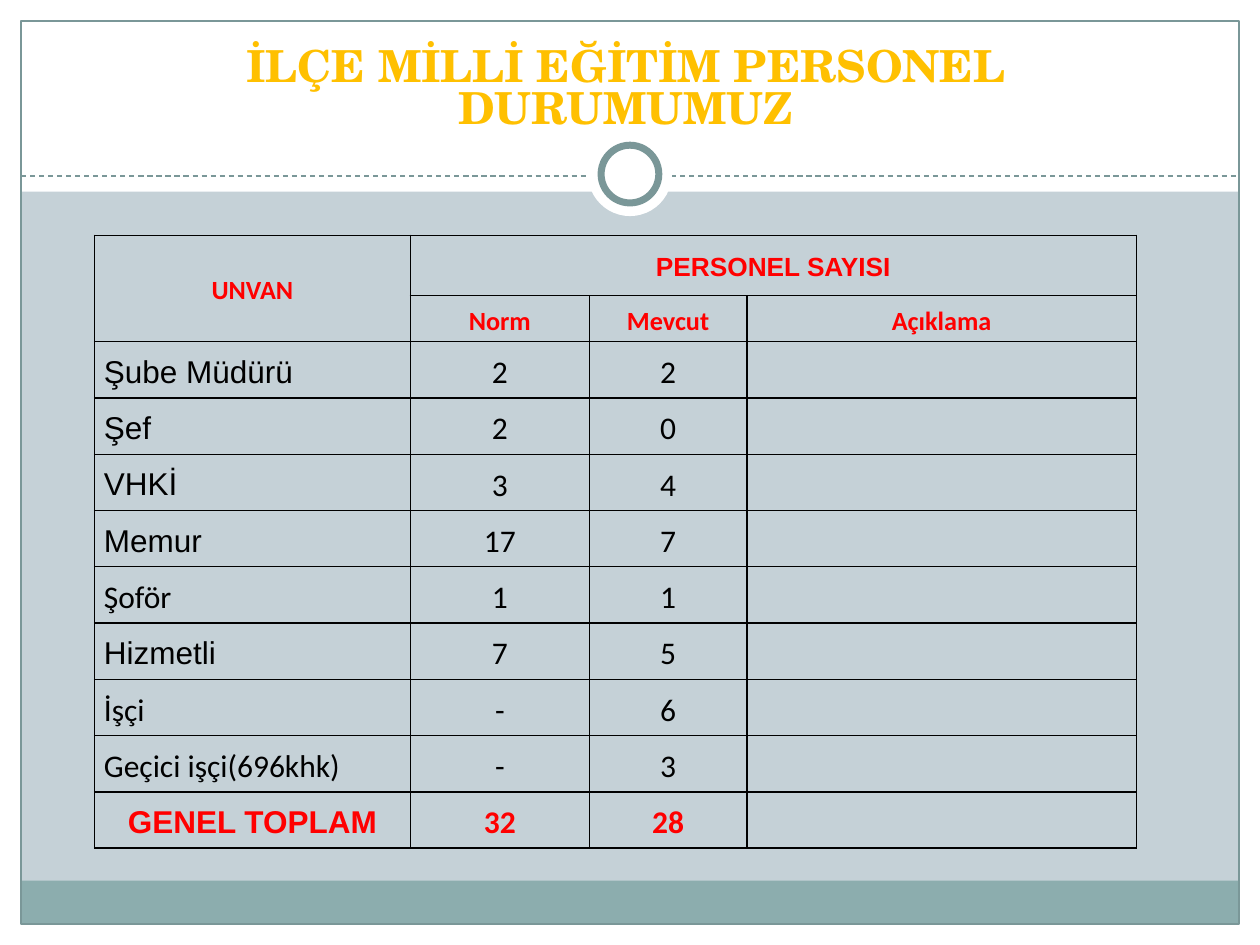
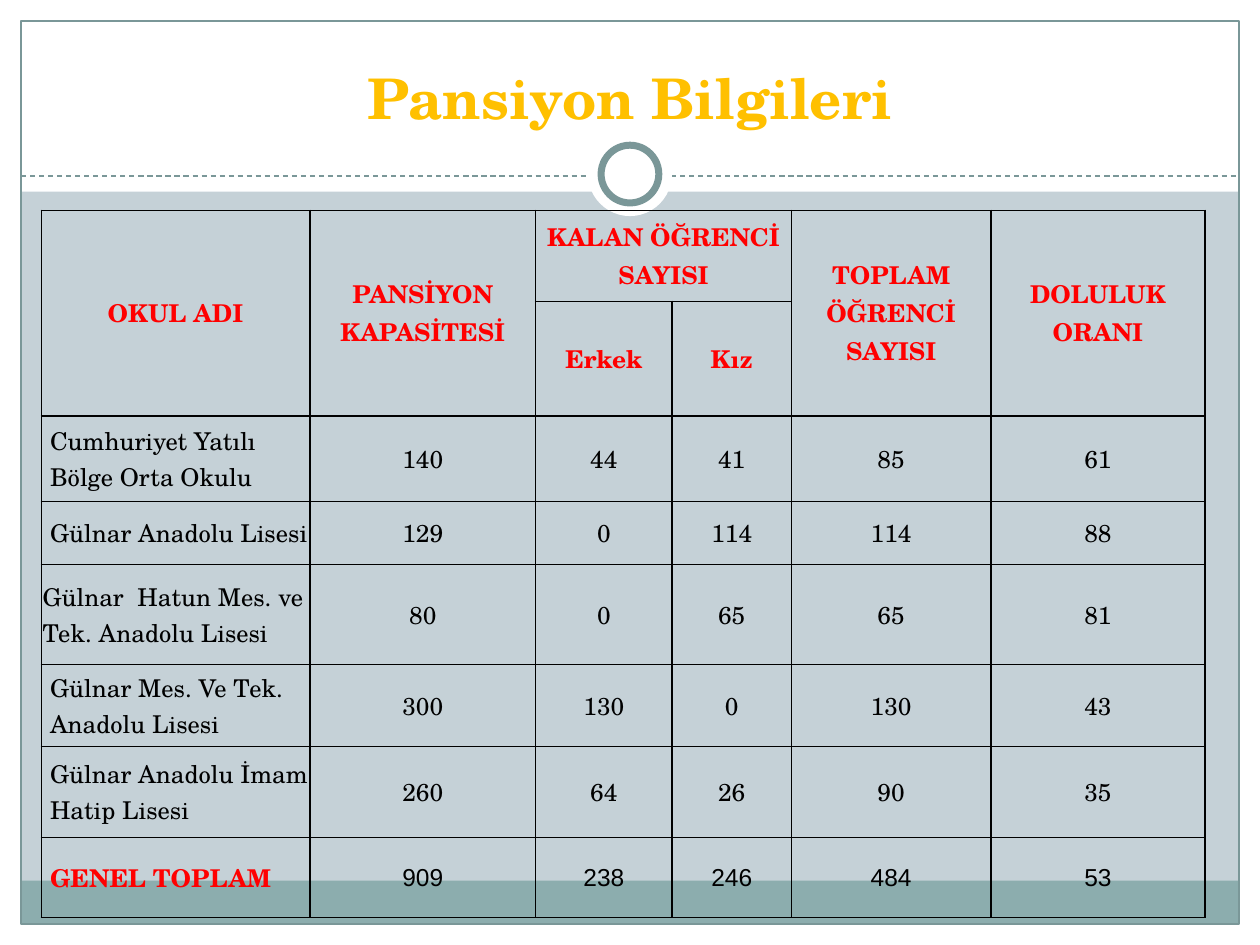
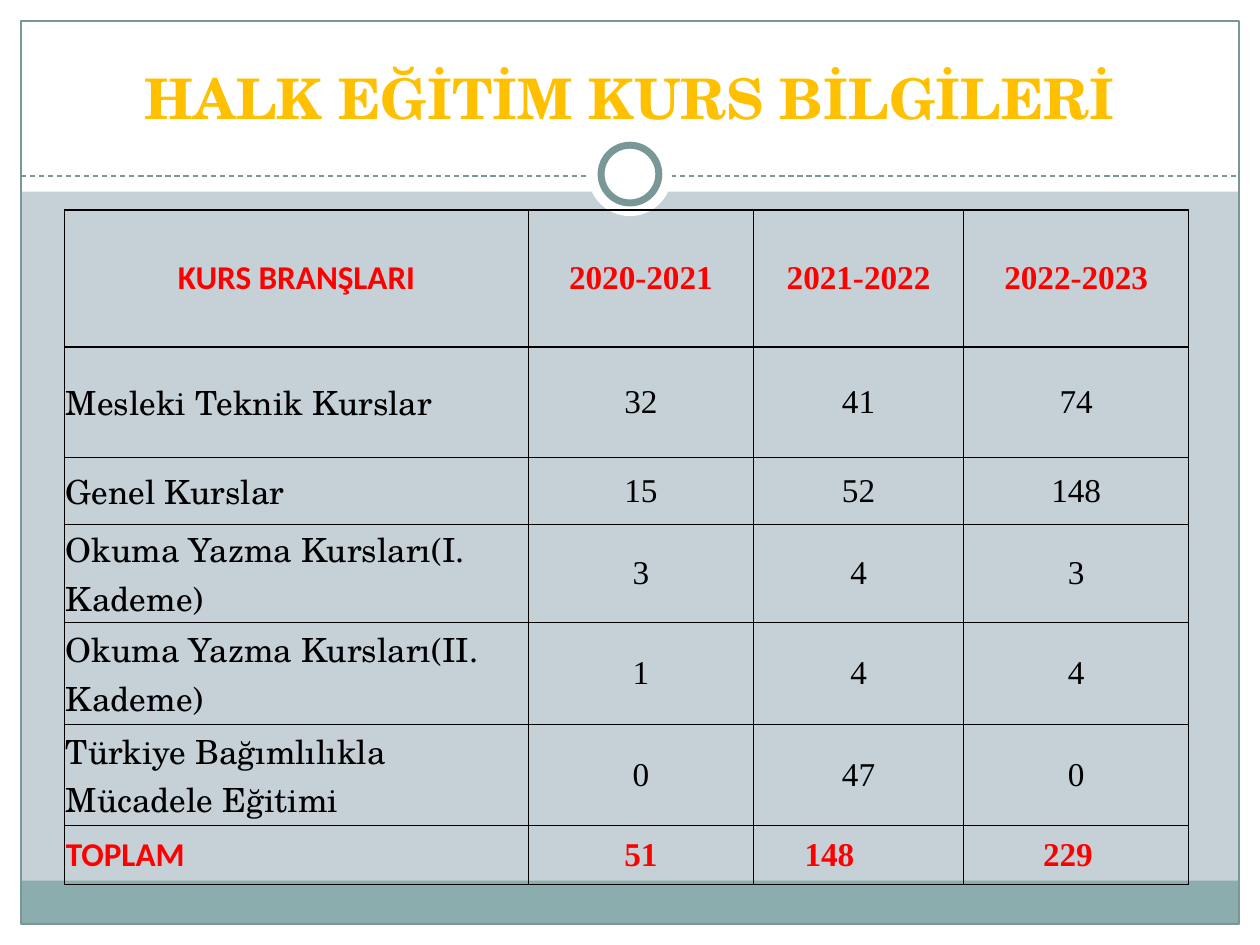
from dataclasses import dataclass

from lxml import etree
from pptx import Presentation
from pptx import util as u
from pptx.dml.color import RGBColor
from pptx.enum import dml, shapes, text
from pptx.oxml import ns


@dataclass(frozen=True)
class Theme:
    background: str = "C5D1D7"
    white: str = "FFFFFF"
    footer: str = "8CADAE"
    frame: str = "7A9798"
    title: str = "FFC000"
    accent: str = "FF0000"
    body: str = "000000"
    serif: str = "TeX Gyre Schola"
    sans: str = "Arial"
    humanist: str = "Calibri"
    roman: str = "Times New Roman"
    title_size: float = 32
    long_title_size: float = 25.2
    staff_header_size: float = 15
    staff_size: float = 18
    dormitory_size: float = 14
    course_size: float = 19


THEME = Theme()
WIDTH, HEIGHT, EDGE = 720, 540, 12
LEFT, CENTER = text.PP_ALIGN.LEFT, text.PP_ALIGN.CENTER
MIDDLE, BOTTOM = text.MSO_ANCHOR.MIDDLE, text.MSO_ANCHOR.BOTTOM


@dataclass(frozen=True)
class Style:
    font: str
    size: float
    color: str = THEME.body
    bold: bool = False


@dataclass(frozen=True)
class Cell:
    text: str
    style: Style
    align: int = CENTER
    left: float = 0.7
    right: float = 0.7


def accent(font, size):
    return Style(font, size, THEME.accent, True)


def row_of(texts, style):
    return [Cell(value, style) for value in texts]


def rgb(color):
    return RGBColor.from_string(color)


def write(paragraph, value, style, align, spacing):
    paragraph.text = value
    paragraph.alignment = align
    paragraph.line_spacing = spacing
    font = paragraph.font
    font.name, font.size, font.bold = style.font, u.Pt(style.size), style.bold
    font.color.rgb = rgb(style.color)


def add_shape(slide, kind, box, fill=None, line=None, weight=0.75):
    shape = slide.shapes.add_shape(kind, *map(u.Pt, box))
    shape.shadow.inherit = False
    if fill:
        shape.fill.solid()
        shape.fill.fore_color.rgb = rgb(fill)
    else:
        shape.fill.background()
    if line:
        shape.line.color.rgb = rgb(line)
        shape.line.width = u.Pt(weight)
    else:
        shape.line.fill.background()


def add_dashed_line(slide, left, right, top):
    connector = slide.shapes.add_connector(
        shapes.MSO_CONNECTOR.STRAIGHT, u.Pt(left), u.Pt(top), u.Pt(right), u.Pt(top))
    connector.line.color.rgb = rgb(THEME.frame)
    connector.line.width = u.Pt(0.75)
    connector.line.dash_style = dml.MSO_LINE.DASH
    etree.SubElement(connector._element.spPr, ns.qn("a:effectLst"))


def add_frame(slide):
    rectangle, oval = shapes.MSO_SHAPE.RECTANGLE, shapes.MSO_SHAPE.OVAL
    inner_width, inner_height = WIDTH - 2 * EDGE, HEIGHT - 2 * EDGE
    for box in [(0, HEIGHT - EDGE, WIDTH, EDGE), (0, 0, WIDTH, 109.5),
                (0, 0, EDGE, HEIGHT), (WIDTH - EDGE, 0, EDGE, HEIGHT)]:
        add_shape(slide, rectangle, box, THEME.white)
    add_shape(slide, rectangle, (EDGE, 503.3, inner_width, 24.5), THEME.footer)
    add_shape(slide, rectangle, (EDGE, EDGE, inner_width, inner_height), line=THEME.frame)
    add_dashed_line(slide, EDGE, WIDTH - EDGE, 100.6)
    add_shape(slide, oval, (336, 75.5, 48, 48), THEME.white)
    add_shape(slide, oval, (343.5, 83, 33, 33), THEME.white, THEME.frame, 4)


def add_title(slide, value, box=(24, 18, 672, 60), size=THEME.title_size,
              anchor=BOTTOM, spacing=1.15):
    frame = slide.shapes.add_textbox(*map(u.Pt, box)).text_frame
    frame.word_wrap = True
    frame.vertical_anchor = anchor
    style = Style(THEME.serif, size, THEME.title, True)
    write(frame.paragraphs[0], value, style, CENTER, spacing)


def add_borders(cell, weight):
    properties = cell._tc.get_or_add_tcPr()
    for side in ("lnL", "lnR", "lnT", "lnB"):
        line = etree.SubElement(properties, ns.qn(f"a:{side}"), w=str(u.Pt(weight)))
        fill = etree.SubElement(line, ns.qn("a:solidFill"))
        etree.SubElement(fill, ns.qn("a:srgbClr"), val=THEME.body)


def add_table(slide, left, top, widths, heights, rows, merges=(), weight=1, spacing=1.0):
    table = slide.shapes.add_table(
        len(heights), len(widths), u.Pt(left), u.Pt(top),
        u.Pt(sum(widths)), u.Pt(sum(heights))).table
    table.first_row = table.horz_banding = False
    for column, width in zip(table.columns, widths):
        column.width = u.Pt(width)
    for row, height in zip(table.rows, heights):
        row.height = u.Pt(height)
    for cell in table.iter_cells():
        add_borders(cell, weight)
        cell.fill.background()
        cell.margin_top = cell.margin_bottom = 0
        cell.vertical_anchor = MIDDLE
    for first, last in merges:
        table.cell(*first).merge(table.cell(*last))
    for row_index, row in enumerate(rows):
        for column_index, content in enumerate(row):
            if content:
                cell = table.cell(row_index, column_index)
                cell.margin_left, cell.margin_right = u.Pt(content.left), u.Pt(content.right)
                write(cell.text_frame.paragraphs[0], content.text, content.style,
                      content.align, spacing)


def add_staff_slide(slide):
    add_title(slide, "İLÇE MİLLİ EĞİTİM PERSONEL DURUMUMUZ", (54, 15, 607, 74),
              THEME.long_title_size, MIDDLE, 0.78)
    header = accent(THEME.humanist, THEME.staff_header_size)
    number = Style(THEME.humanist, THEME.staff_size)
    total = accent(THEME.humanist, THEME.staff_size)
    staff = [
        ("Şube Müdürü", THEME.sans, "2", "2"),
        ("Şef", THEME.sans, "2", "0"),
        ("VHKİ", THEME.sans, "3", "4"),
        ("Memur", THEME.sans, "17", "7"),
        ("Şoför", THEME.humanist, "1", "1"),
        ("Hizmetli", THEME.sans, "7", "5"),
        ("İşçi", THEME.humanist, "-", "6"),
        ("Geçici işçi(696khk)", THEME.humanist, "-", "3"),
    ]
    rows = [
        [Cell("UNVAN", header),
         Cell("PERSONEL SAYISI", accent(THEME.sans, THEME.staff_header_size))],
        [None] + row_of(["Norm", "Mevcut", "Açıklama"], header),
    ]
    for label, font, *counts in staff:
        rows.append([Cell(label, Style(font, THEME.staff_size), LEFT, 5.4)]
                    + row_of(counts, number))
    rows.append([Cell("GENEL TOPLAM", accent(THEME.sans, THEME.staff_size))]
                + row_of(["32", "28"], total))
    add_table(slide, 54, 134.5, [180.5, 102.3, 90, 222.7], [34.5, 26.3] + [32.15] * 9, rows,
              merges=[((0, 0), (1, 0)), ((0, 1), (0, 3))], spacing=1.15)


def add_dormitory_slide(slide):
    add_title(slide, "Pansiyon Bilgileri")
    header = accent(THEME.serif, THEME.dormitory_size)
    body = Style(THEME.serif, THEME.dormitory_size)
    total = Style(THEME.sans, THEME.dormitory_size)
    indent = 5
    schools = [
        ("Cumhuriyet Yatılı Bölge Orta Okulu", indent, "140", "44", "41", "85", "61"),
        ("Gülnar Anadolu Lisesi", indent, "129", "0", "114", "114", "88"),
        ("Gülnar  Hatun Mes. ve Tek. Anadolu Lisesi", 0.7, "80", "0", "65", "65", "81"),
        ("Gülnar Mes. Ve Tek. Anadolu Lisesi", indent, "300", "130", "0", "130", "43"),
        ("Gülnar Anadolu İmam Hatip Lisesi", indent, "260", "64", "26", "90", "35"),
    ]
    top = row_of(["OKUL ADI", "PANSİYON KAPASİTESİ", "KALAN ÖĞRENCİ SAYISI",
                  "TOPLAM ÖĞRENCİ SAYISI", "DOLULUK ORANI"], header)
    rows = [top[:3] + [None] + top[3:],
            [None, None] + row_of(["Erkek", "Kız"], header)]
    for label, inset, *values in schools:
        rows.append([Cell(label, body, LEFT, inset)] + row_of(values, body))
    rows.append([Cell("GENEL TOPLAM", header, LEFT, indent)]
                + row_of(["909", "238", "246", "484", "53"], total))
    merges = [((0, column), (1, column)) for column in (0, 1, 4, 5)] + [((0, 2), (0, 3))]
    add_table(slide, 23.6, 120.2, [153.5, 129, 78, 68.2, 114, 122.4],
              [52, 65.5, 49, 36, 57, 47, 52, 45.7], rows, merges)


def add_course_slide(slide):
    add_title(slide, "HALK EĞİTİM KURS BİLGİLERİ")
    label_header = accent(THEME.humanist, THEME.course_size)
    number_header = accent(THEME.roman, THEME.course_size)
    label_style = Style(THEME.serif, THEME.course_size)
    number = Style(THEME.roman, THEME.course_size)
    courses = [
        ("Mesleki Teknik Kurslar", "32", "41", "74"),
        ("Genel Kurslar", "15", "52", "148"),
        ("Okuma Yazma Kursları(I. Kademe)", "3", "4", "3"),
        ("Okuma Yazma Kursları(II. Kademe)", "1", "4", "4"),
        ("Türkiye Bağımlılıkla Mücadele Eğitimi", "0", "47", "0"),
    ]
    rows = [[Cell("KURS BRANŞLARI", label_header)]
            + row_of(["2020-2021", "2021-2022", "2022-2023"], number_header)]
    for label, *counts in courses:
        rows.append([Cell(label, label_style, LEFT)] + row_of(counts, number))
    rows.append([Cell("TOPLAM", label_header, LEFT), Cell("51", number_header),
                 Cell("148", number_header, right=34), Cell("229", number_header, right=10)])
    add_table(slide, 37, 120, [265, 128.5, 120.3, 128.4],
              [78.3, 63.3, 38, 56.3, 58, 58, 33.8], rows, weight=0.75)


def main():
    presentation = Presentation()
    presentation.slide_width, presentation.slide_height = u.Pt(WIDTH), u.Pt(HEIGHT)
    background = presentation.slide_master.background.fill
    background.solid()
    background.fore_color.rgb = rgb(THEME.background)
    for add_content in (add_staff_slide, add_dormitory_slide, add_course_slide):
        slide = presentation.slides.add_slide(presentation.slide_layouts[6])
        add_frame(slide)
        add_content(slide)
    presentation.save("out.pptx")


if __name__ == "__main__":
    main()
